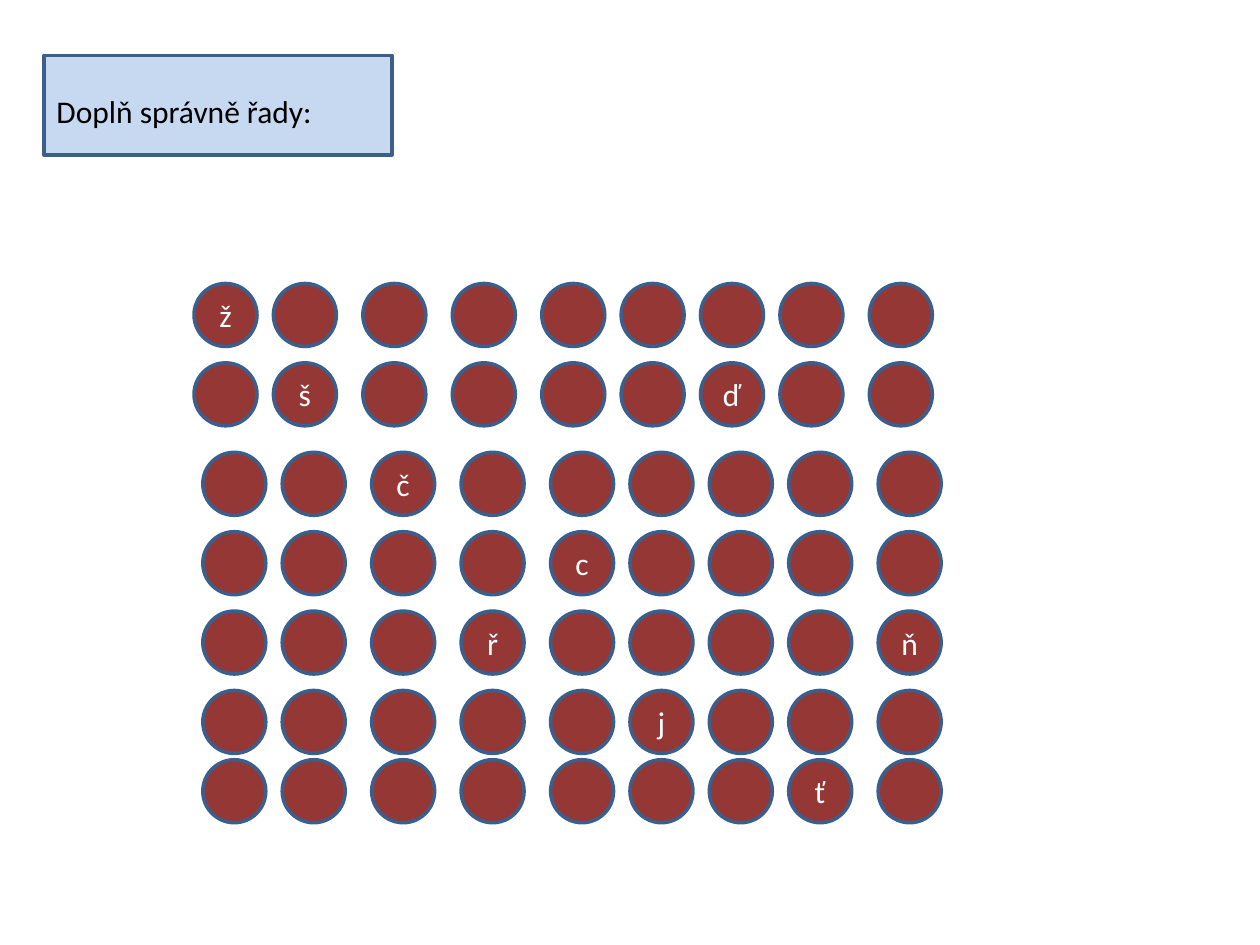
from dataclasses import dataclass

from pptx import Presentation
from pptx.dml.color import RGBColor
from pptx.enum.shapes import MSO_SHAPE
from pptx.enum.text import MSO_ANCHOR, MSO_AUTO_SIZE, PP_ALIGN
from pptx.shapes.autoshape import Shape
from pptx.slide import Slide
from pptx.text.text import TextFrame
from pptx.util import Inches, Pt


@dataclass(frozen=True)
class Theme:
    font: str = "Calibri"
    text_size: Pt = Pt(18)
    line_width: Pt = Pt(2)
    panel: RGBColor = RGBColor(0xC6, 0xD9, 0xF1)
    bead: RGBColor = RGBColor(0x95, 0x37, 0x35)
    outline: RGBColor = RGBColor(0x3A, 0x5F, 0x8C)
    dark_text: RGBColor = RGBColor(0, 0, 0)
    light_text: RGBColor = RGBColor(0xFF, 0xFF, 0xFF)


@dataclass(frozen=True)
class BeadRow:
    left: float
    top: float
    letters: dict[int, str]


THEME = Theme()
BEAD_SIZE = 0.5
COLUMN_OFFSETS = (0, 0.63, 1.34, 2.05, 2.76, 3.39, 4.02, 4.65, 5.36)
BEAD_ROWS = (
    BeadRow(1.54, 2.25, {0: "ž"}),
    BeadRow(1.54, 2.88, {1: "š", 6: "ď"}),
    BeadRow(1.61, 3.59, {2: "č"}),
    BeadRow(1.61, 4.22, {4: "c"}),
    BeadRow(1.61, 4.85, {3: "ř", 8: "ň"}),
    BeadRow(1.61, 5.48, {5: "j"}),
    BeadRow(1.61, 6.03, {7: "ť"}),
)


def write(frame: TextFrame, text: str, color: RGBColor) -> None:
    frame.text = text
    font = frame.paragraphs[0].runs[0].font
    font.name = THEME.font
    font.size = THEME.text_size
    font.color.rgb = color


def add_outlined(slide: Slide, kind: MSO_SHAPE, left: float, top: float,
                 width: float, height: float, fill: RGBColor) -> Shape:
    outlined = slide.shapes.add_shape(
        kind, Inches(left), Inches(top), Inches(width), Inches(height))
    outlined.shadow.inherit = False
    outlined.fill.solid()
    outlined.fill.fore_color.rgb = fill
    outlined.line.color.rgb = THEME.outline
    outlined.line.width = THEME.line_width
    return outlined


def add_instruction(slide: Slide) -> None:
    add_outlined(slide, MSO_SHAPE.RECTANGLE, 0.35, 0.44, 2.76, 0.79, THEME.panel)
    instruction = slide.shapes.add_textbox(
        Inches(0.35), Inches(0.68), Inches(6.77), Inches(0.4)).text_frame
    instruction.word_wrap = True
    instruction.auto_size = MSO_AUTO_SIZE.SHAPE_TO_FIT_TEXT
    write(instruction, "Doplň správně řady:", THEME.dark_text)


def add_bead_row(slide: Slide, row: BeadRow) -> None:
    for column, offset in enumerate(COLUMN_OFFSETS):
        bead = add_outlined(slide, MSO_SHAPE.FLOWCHART_CONNECTOR, row.left + offset,
                            row.top, BEAD_SIZE, BEAD_SIZE, THEME.bead)
        if column in row.letters:
            write(bead.text_frame, row.letters[column], THEME.light_text)
            bead.text_frame.vertical_anchor = MSO_ANCHOR.MIDDLE
            bead.text_frame.paragraphs[0].alignment = PP_ALIGN.CENTER


def main() -> None:
    """Build the exercise slide with its rows of letter beads."""
    presentation = Presentation()
    presentation.slide_width = Inches(10)
    presentation.slide_height = Inches(7.5)
    slide = presentation.slides.add_slide(presentation.slide_layouts[6])
    add_instruction(slide)
    for row in BEAD_ROWS:
        add_bead_row(slide, row)
    presentation.save("out.pptx")


if __name__ == "__main__":
    main()
